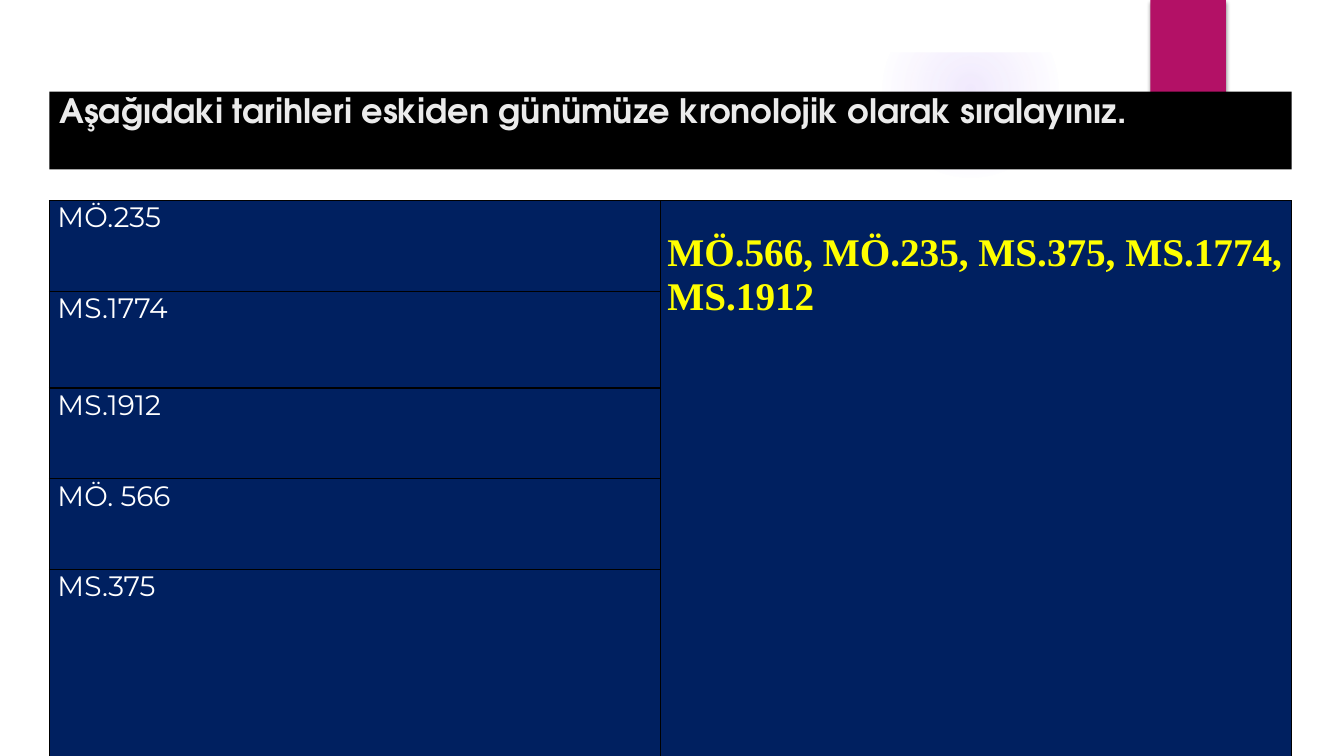
"""Build a Turkish chronology exercise slide with a question and its answer table."""
from dataclasses import dataclass
from typing import Any

from lxml import etree
from pptx import Presentation
from pptx.dml.color import RGBColor
from pptx.enum.shapes import MSO_SHAPE as Shp
from pptx.enum.text import MSO_ANCHOR as Anchor, PP_ALIGN as Align
from pptx.oxml import parse_xml
from pptx.util import Inches, Pt

NS = 'xmlns:a="http://schemas.openxmlformats.org/drawingml/2006/main"'
NAVY, BLACK, WHITE = "002060", "000000", "FFFFFF"
GLOW, GLOW_STOPS = "9B6BF2", ((0, 14), (36, 7), (73, 0), (100, 0))
DATES = ("MÖ.235", "MS.1774", "MS.1912", "MÖ. 566", "MS.375")
COLS, ROWS = (6.06, 6.26), (0.9, 0.96, 0.9, 0.9, 1.87)


@dataclass
class Block:
    """A preset shape with its place and fill."""
    kind: Shp
    left: float
    top: float
    width: float
    height: float
    color: str


def rgb(color: str) -> RGBColor:
    """Turn a hex string into a colour."""
    return RGBColor.from_string(color)


def add_block(s: Any, b: Block) -> Any:
    """Draw a plain filled block."""
    sp = s.shapes.add_shape(b.kind, *map(Inches, (b.left, b.top, b.width, b.height)))
    sp.shadow.inherit = False
    sp.fill.solid()
    sp.fill.fore_color.rgb = rgb(b.color)
    sp.line.fill.background()
    return sp


def put_text(tf: Any, text: str, color: str, **fmt: Any) -> None:
    """Write one left-aligned formatted paragraph."""
    tf.word_wrap = True
    p = tf.paragraphs[0]
    p.alignment = Align.LEFT
    r = p.add_run()
    r.text = text
    r.font.color.rgb = rgb(color)
    for name, value in fmt.items():
        setattr(r.font, name, value)


def set_margins(box: Any, anchor: Anchor, side: float, top: float = 0,
                bottom: float = 0) -> None:
    """Anchor text and set its margins."""
    box.vertical_anchor = anchor
    margins = {"left": side, "top": top, "right": side, "bottom": bottom}
    for name, value in margins.items():
        setattr(box, f"margin_{name}", Inches(value))


def add_glow(sp: Any) -> None:
    """Fill a shape with a radial gradient that fades out."""
    stops = "".join(
        f'<a:gs pos="{pos * 1000}"><a:srgbClr val="{GLOW}">'
        f'<a:alpha val="{alpha * 1000}"/></a:srgbClr></a:gs>'
        for pos, alpha in GLOW_STOPS)
    grad = parse_xml(
        f'<a:gradFill {NS}><a:gsLst>{stops}</a:gsLst><a:path path="circle">'
        '<a:fillToRect l="50000" t="50000" r="50000" b="50000"/></a:path></a:gradFill>')
    solid = sp._element.spPr.find("{*}solidFill")
    solid.getparent().replace(solid, grad)


def add_shadow(sp: Any) -> None:
    """Give a shape a soft shadow below it."""
    effects = sp._element.spPr.find("{*}effectLst")
    effects.append(parse_xml(
        f'<a:outerShdw {NS} blurRad="{Pt(3)}" dist="{Pt(2)}" dir="5400000">'
        f'<a:srgbClr val="{BLACK}"><a:alpha val="45000"/></a:srgbClr></a:outerShdw>'))


def style_cell(cell: Any) -> None:
    """Set the fill, margins and borders of a cell."""
    set_margins(cell, Anchor.TOP, 0.08)
    cell.fill.solid()
    cell.fill.fore_color.rgb = rgb(NAVY)
    tc_pr = cell._tc.get_or_add_tcPr()
    for i, side in enumerate("LRTB"):
        ln = parse_xml(f'<a:ln{side} {NS} w="{Pt(1)}"/>')
        fill = etree.SubElement(ln, ln.tag.split("}")[0] + "}solidFill")
        fill.append(parse_xml(f'<a:srgbClr {NS} val="{BLACK}"/>'))
        tc_pr.insert(i, ln)


def add_dates(s: Any) -> None:
    """Draw the table of dates with the merged answer cell."""
    frame = s.shapes.add_table(
        len(ROWS), len(COLS), *map(Inches, (0.49, 1.99, sum(COLS), sum(ROWS))))
    tbl = frame.table
    for col, width in zip(tbl.columns, COLS):
        col.width = Inches(width)
    for row, height in zip(tbl.rows, ROWS):
        row.height = Inches(height)
    for cell in tbl.iter_cells():
        style_cell(cell)
    answer = tbl.cell(0, 1)
    answer.merge(tbl.cell(len(ROWS) - 1, 1))
    set_margins(answer, Anchor.TOP, 0.07, top=0.31)
    for i, date in enumerate(DATES):
        put_text(tbl.cell(i, 0).text_frame, date, WHITE, size=Pt(20),
                 name="Montserrat", bold=False)
    put_text(answer.text_frame, "MÖ.566, MÖ.235, MS.375, MS.1774, MS.1912",
             "FFFF00", size=Pt(28), name="Times New Roman", bold=True)


def main() -> None:
    """Build and save the slide."""
    prs = Presentation()
    prs.slide_width, prs.slide_height = Inches(13.33), Inches(7.5)
    s = prs.slides.add_slide(prs.slide_layouts[6])
    add_glow(add_block(s, Block(Shp.OVAL, 8.75, 0.01, 1.75, 1.75, GLOW)))
    border = add_block(s, Block(Shp.FRAME, 0, 0, 13.33, 7.5, WHITE))
    border.adjustments[0] = 0.52 / 7.5
    add_shadow(add_block(s, Block(Shp.RECTANGLE, 11.41, 0, 0.75, 1.25, "B31166")))
    title = add_block(s, Block(Shp.RECTANGLE, 0.49, 0.91, 12.32, 0.77, BLACK))
    set_margins(title.text_frame, Anchor.MIDDLE, 0.1, bottom=0.41)
    put_text(title.text_frame,
             "Aşağıdaki tarihleri eskiden günümüze kronolojik olarak sıralayınız.",
             "EBEBEB", size=Pt(24), name="TeX Gyre Adventor", bold=True)
    add_dates(s)
    prs.save("out.pptx")


if __name__ == "__main__":
    main()
